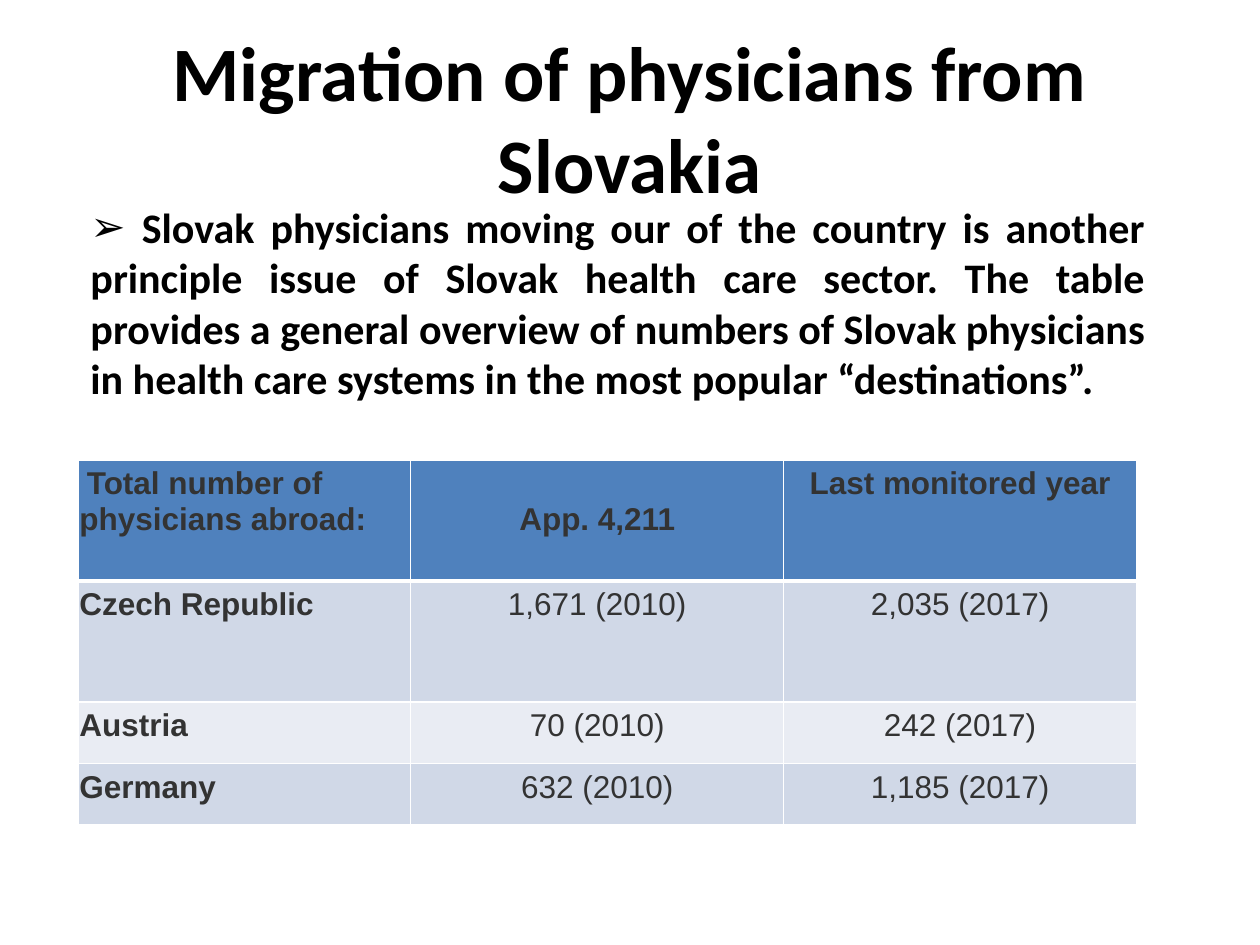
from lxml.etree import SubElement
from pptx import Presentation
from pptx.dml.color import RGBColor
from pptx.enum.text import MSO_ANCHOR as Anchor, PP_ALIGN as Align
from pptx.oxml import parse_xml
from pptx.oxml.ns import nsdecls, qn
from pptx.util import Inches, Pt

COLORS = {"text": "000000", "cell": "333333", "header": "4F81BD",
          "band_dark": "D0D8E7", "band_light": "E9ECF3", "border": "FFFFFF"}

TITLE = "Migration of physicians from Slovakia"
BODY = (" Slovak physicians moving our of the country is another principle issue of "
        "Slovak health care sector. The table provides a general overview of numbers of "
        "Slovak physicians in health care systems in the most popular “destinations”.")
ROWS = [
    ("Total number of physicians abroad:", "App. 4,211", "Last monitored year"),
    ("Czech Republic", "1,671 (2010)", "2,035 (2017)"),
    ("Austria", "70 (2010)", "242 (2017)"),
    ("Germany", "632 (2010)", "1,185 (2017)"),
]
COLUMN_WIDTHS = [2.64, 2.96, 2.8]
ROW_HEIGHTS = [0.96, 0.96, 0.49, 0.49]
THIN, THICK = 0.96, 3

TITLE_FONT = {"name": "Calibri", "size": Pt(44), "bold": True}
BODY_FONT = {"name": "Calibri", "size": Pt(24), "bold": True}
CELL_FONT = {"name": "Arial", "size": Pt(18)}


def color(name):
    return RGBColor.from_string(COLORS[name])


def style_font(font, formats, color_name):
    for attribute, value in formats.items():
        setattr(font, attribute, value)
    font.color.rgb = color(color_name)


def add_text(slide, text, box, formats, align, anchor):
    frame = slide.shapes.add_textbox(*map(Inches, box)).text_frame
    frame.word_wrap = True
    frame.vertical_anchor = anchor
    paragraph = frame.paragraphs[0]
    paragraph.alignment = align
    run = paragraph.add_run()
    run.text = text
    style_font(run.font, formats, color_name="text")
    return paragraph


def add_bullet(paragraph, character, indent):
    properties = paragraph._p.get_or_add_pPr()
    properties.set("marL", "0")
    properties.set("indent", str(Inches(indent)))
    bullet_color = SubElement(properties, qn("a:buClr"))
    SubElement(bullet_color, qn("a:srgbClr")).set("val", COLORS["text"])
    SubElement(properties, qn("a:buFont")).set("typeface", "Arial")
    SubElement(properties, qn("a:buChar")).set("char", character)


def set_borders(cell, widths):
    """Draw the left, right, top and bottom borders, with widths in points."""
    properties = cell._tc.get_or_add_tcPr()
    for index, (side, width) in enumerate(zip("LRTB", widths)):
        properties.insert(index, parse_xml(
            f'<a:ln{side} {nsdecls("a")} w="{Pt(width)}"><a:solidFill>'
            f'<a:srgbClr val="{COLORS["border"]}"/></a:solidFill></a:ln{side}>'))


def fill_cell(cell, text, row, column):
    cell.margin_left = cell.margin_right = Inches(0.01)
    cell.margin_top = cell.margin_bottom = Inches(0.05)
    cell.fill.solid()
    band = "header" if row == 0 else "band_dark" if row % 2 else "band_light"
    cell.fill.fore_color.rgb = color(band)
    set_borders(cell, (THIN, THIN, THICK if row == 1 else THIN,
                       THICK if row == 0 else THIN))
    paragraph = cell.text_frame.paragraphs[0]
    paragraph.alignment = Align.LEFT if column == 0 else Align.CENTER
    run = paragraph.add_run()
    run.text = text
    style_font(run.font, {**CELL_FONT, "bold": row == 0 or column == 0}, "cell")


def add_physician_table(slide):
    table = slide.shapes.add_table(
        len(ROWS), len(COLUMN_WIDTHS), Inches(0.62), Inches(3.65),
        Inches(sum(COLUMN_WIDTHS)), Inches(sum(ROW_HEIGHTS))).table
    for column, width in zip(table.columns, COLUMN_WIDTHS):
        column.width = Inches(width)
    for row, height in zip(table.rows, ROW_HEIGHTS):
        row.height = Inches(height)
    for row, texts in enumerate(ROWS):
        for column, text in enumerate(texts):
            fill_cell(table.cell(row, column), text, row, column)
    heading = table.cell(0, 0).text_frame.paragraphs[0]
    heading._p.get_or_add_pPr().set("indent", str(Inches(0.06)))
    table.cell(0, 1).margin_top = Inches(0.33)  # the total sits one line lower


def main():
    presentation = Presentation()
    presentation.slide_width, presentation.slide_height = Inches(10), Inches(7.5)
    slide = presentation.slides.add_slide(presentation.slide_layouts[6])
    add_text(slide, TITLE, (0.5, 0.3, 9, 1.25), TITLE_FONT, Align.CENTER, Anchor.MIDDLE)
    add_physician_table(slide)
    body = add_text(slide, BODY, (0.62, 1.55, 8.57, 1.7), BODY_FONT,
                    Align.JUSTIFY, Anchor.TOP)
    add_bullet(body, "➢", indent=-0.24)
    presentation.save("out.pptx")


if __name__ == "__main__":
    main()
